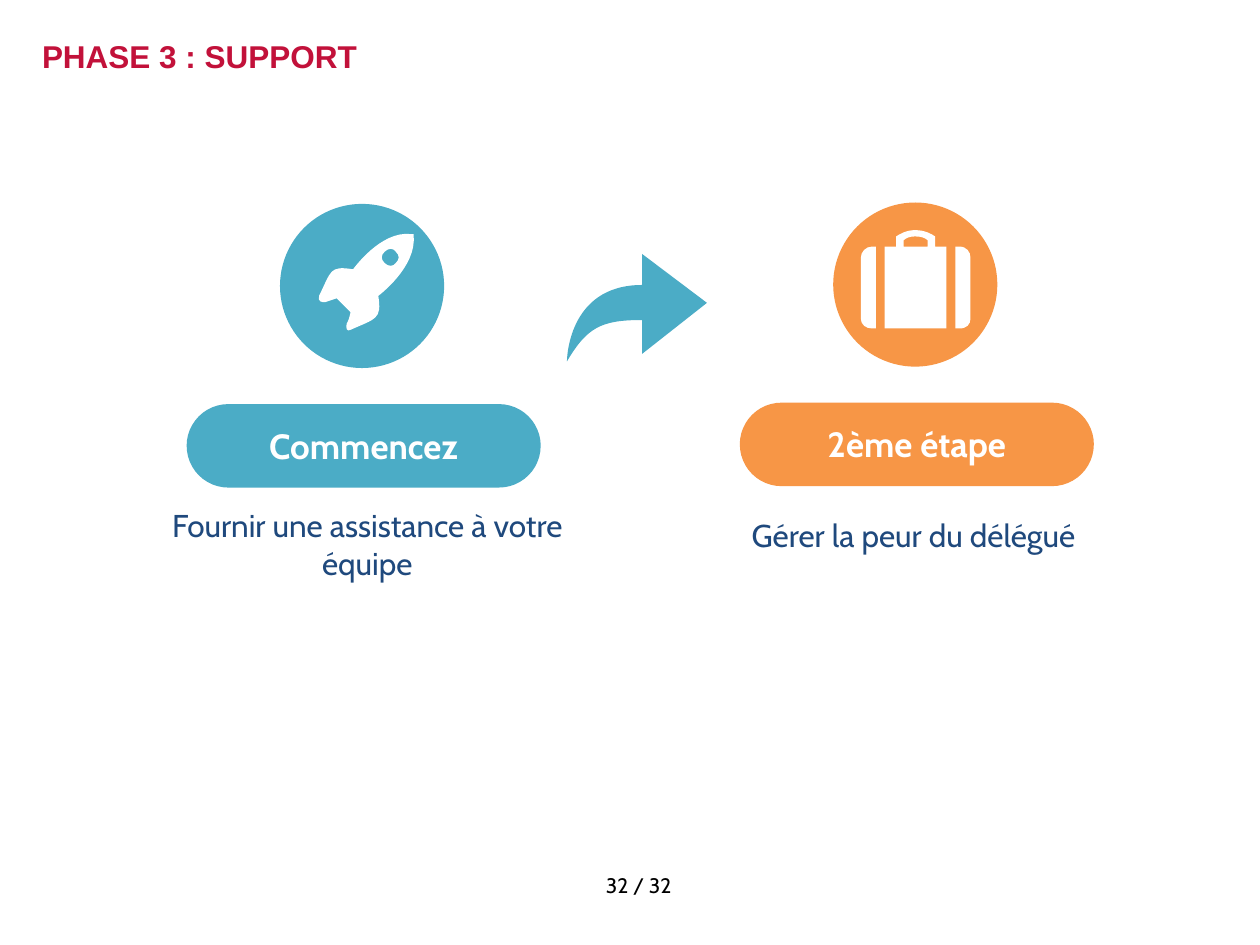
from dataclasses import dataclass

from lxml.etree import SubElement
from pptx import Presentation
from pptx.dml.color import RGBColor as Color
from pptx.enum.shapes import MSO_SHAPE as Shape
from pptx.enum.text import MSO_ANCHOR as Anchor, MSO_AUTO_SIZE as AutoSize, PP_ALIGN as Align
from pptx.oxml.ns import qn
from pptx.util import Pt


@dataclass(frozen=True)
class Theme:
    red: str = "C2113A"
    teal: str = "4BACC6"
    orange: str = "F79646"
    navy: str = "1F497D"
    white: str = "FFFFFF"
    black: str = "000000"
    title_font: str = "Arial"
    body_font: str = "Cabin"
    title_size: int = 18
    label_size: int = 20
    caption_size: int = 18
    footer_size: int = 12


theme = Theme()

# Two numbers are a line to a point; six are a cubic curve.
ROCKET = [
    [(56.2, 52.6), (56.2, 52.6, 78.5, 36, 76.3, 18), (76.3, 17.3), (74.9, 17.3),
     (57.6, 15.1, 41.8, 37.4, 41.8, 37.4), (28.1, 35.3, 29.5, 38.2, 22.3, 52.6),
     (21.6, 56.2, 23.8, 56.2, 25.9, 56.2), (28.1, 55.4, 32.4, 54, 32.4, 54),
     (40.3, 61.9), (40.3, 61.9, 39.6, 66.2, 38.2, 68.4),
     (37.4, 70.6, 38.2, 73.4, 40.3, 72), (54.7, 65.5, 58.3, 66.2, 56.2, 52.6)],
    [(59.8, 33.8), (57.6, 31.7, 57.6, 29.5, 59.8, 27.4),
     (61.9, 25.2, 64.8, 25.2, 66.2, 27.4), (68.4, 29.5, 68.4, 31.7, 66.2, 33.8),
     (64.8, 36, 61.9, 36, 59.8, 33.8)],
]
SUITCASE = [
    [(72, 25.2), (69.8, 25.2), (69.8, 72), (72, 72), (76.3, 72, 78.5, 69.8, 78.5, 66.2),
     (78.5, 31.7), (78.5, 28.1, 76.3, 25.2, 72, 25.2)],
    [(15.8, 31.7), (15.8, 66.2), (15.8, 69.8, 18.7, 72, 22.3, 72), (24.5, 72),
     (24.5, 25.2), (22.3, 25.2), (18.7, 25.2, 15.8, 28.1, 15.8, 31.7)],
    [(58.3, 19.4), (56.2, 18, 52.6, 15.8, 46.8, 15.8), (41.8, 15.8, 38.2, 18, 36, 19.4),
     (36, 25.2), (29.5, 25.2), (29.5, 72), (64.8, 72), (64.8, 25.2), (58.3, 25.2)],
    [(54, 25.2), (40.3, 25.2), (40.3, 21.6), (41.8, 20.2, 43.9, 19.4, 46.8, 19.4),
     (50.4, 19.4, 52.6, 20.2, 54, 21.6)],
]
ARROW = [
    [(366.9, 182.9), (366.9, 202.3), (404, 173.1), (366.9, 145.1), (366.9, 162.9),
     (324, 162.9, 324, 206.5, 324, 206.5), (335.5, 187.2, 343.4, 182.9, 366.9, 182.9)],
]

TITLE = "PHASE 3 : SUPPORT"
FOOTER = "32 / 32"
STEPS = [
    dict(label="Commencez", caption="Fournir une assistance à votre équipe", color=theme.teal,
         icon=ROCKET, origin=(160, 116.5), caption_box=(84.6, 285.5, 250.6, 50.4)),
    dict(label="2ème étape", caption="Gérer la peur du délégué", color=theme.orange,
         icon=SUITCASE, origin=(476.1, 115.7), caption_box=(408.6, 291.2, 226.8, 28.1)),
]
CIRCLE = 93.8
PILL_WIDTH, PILL_HEIGHT, PILL_DROP = 202.3, 47.7, 114.4
LABEL_WIDTH, LABEL_HEIGHT, LABEL_DROP = 208.8, 24.5, 126
LABEL_SHIFT = 0.9


def paint(shape, color):
    shape.shadow.inherit = False
    shape.fill.solid()
    shape.fill.fore_color.rgb = Color.from_string(color)
    shape.line.fill.background()


def write(shape, text, font, size, color, bold=False, align=Align.CENTER, inset=None):
    frame = shape.text_frame
    frame.text = text
    frame.word_wrap = True
    frame.auto_size = AutoSize.NONE
    frame.vertical_anchor = Anchor.TOP
    if inset is not None:
        frame.margin_left = frame.margin_right = Pt(inset)
        frame.margin_top = frame.margin_bottom = Pt(inset)
    paragraph = frame.paragraphs[0]
    paragraph.alignment = align
    run_font = paragraph.runs[0].font
    run_font.name, run_font.size, run_font.bold = font, Pt(size), bold
    run_font.color.rgb = Color.from_string(color)


def add_preset(slide, kind, box, color):
    shape = slide.shapes.add_shape(kind, *map(Pt, box))
    paint(shape, color)
    return shape


def add_text(slide, box, text, size, color, **options):
    shape = slide.shapes.add_textbox(*map(Pt, box))
    write(shape, text, theme.body_font, size, color, **options)


def add_outline(slide, contours, color, origin=(0, 0)):
    def place(point):
        return Pt(origin[0] + point[0]), Pt(origin[1] + point[1])

    builder = None
    for contour in contours:
        if builder is None:
            builder = slide.shapes.build_freeform(*place(contour[0]))
        else:
            builder.move_to(*place(contour[0]))
        builder.add_line_segments([place(segment[-2:]) for segment in contour[1:]], close=True)
    shape = builder.convert_to_shape()

    segments = [segment for contour in contours for segment in contour[1:]]
    lines = list(shape.element.iter(qn("a:lnTo")))
    for line, segment in zip(lines, segments):
        if len(segment) == 2:
            continue
        curve = SubElement(line.getparent(), qn("a:cubicBezTo"))
        line.getparent().replace(line, curve)
        for index in (0, 2, 4):
            x, y = place(segment[index:index + 2])
            SubElement(curve, qn("a:pt"), x=str(x - shape.left), y=str(y - shape.top))
    paint(shape, color)


def add_pill(slide, center, top, color):
    middle = top + PILL_HEIGHT / 2
    box = (center - PILL_HEIGHT / 2, middle - PILL_WIDTH / 2, PILL_HEIGHT, PILL_WIDTH)
    pill = add_preset(slide, Shape.ROUND_2_SAME_RECTANGLE, box, color)
    pill.adjustments[0] = pill.adjustments[1] = 0.5
    pill.rotation = 90


def add_step(slide, step):
    left, top = step["origin"]
    center = left + CIRCLE / 2 + LABEL_SHIFT
    add_pill(slide, center, top + PILL_DROP, step["color"])
    label_box = (center - LABEL_WIDTH / 2, top + LABEL_DROP, LABEL_WIDTH, LABEL_HEIGHT)
    add_text(slide, label_box, step["label"], theme.label_size, theme.white, bold=True, inset=0)
    add_preset(slide, Shape.OVAL, (left, top, CIRCLE, CIRCLE), step["color"])
    add_text(slide, step["caption_box"], step["caption"], theme.caption_size, theme.navy)
    add_outline(slide, step["icon"], theme.white, step["origin"])


def main():
    presentation = Presentation()
    presentation.slide_width, presentation.slide_height = Pt(720), Pt(540)
    slide = presentation.slides.add_slide(presentation.slide_layouts[5])

    title = slide.shapes.title
    title.left, title.top, title.width, title.height = map(Pt, (24, 21, 672, 54.7))
    write(title, TITLE, theme.title_font, theme.title_size, theme.red,
          bold=True, align=Align.LEFT, inset=0)

    for step in STEPS:
        add_step(slide, step)
    add_outline(slide, ARROW, theme.teal)
    add_text(slide, (315, 495, 100, 22.3), FOOTER, theme.footer_size, theme.black)
    presentation.save("out.pptx")


if __name__ == "__main__":
    main()
